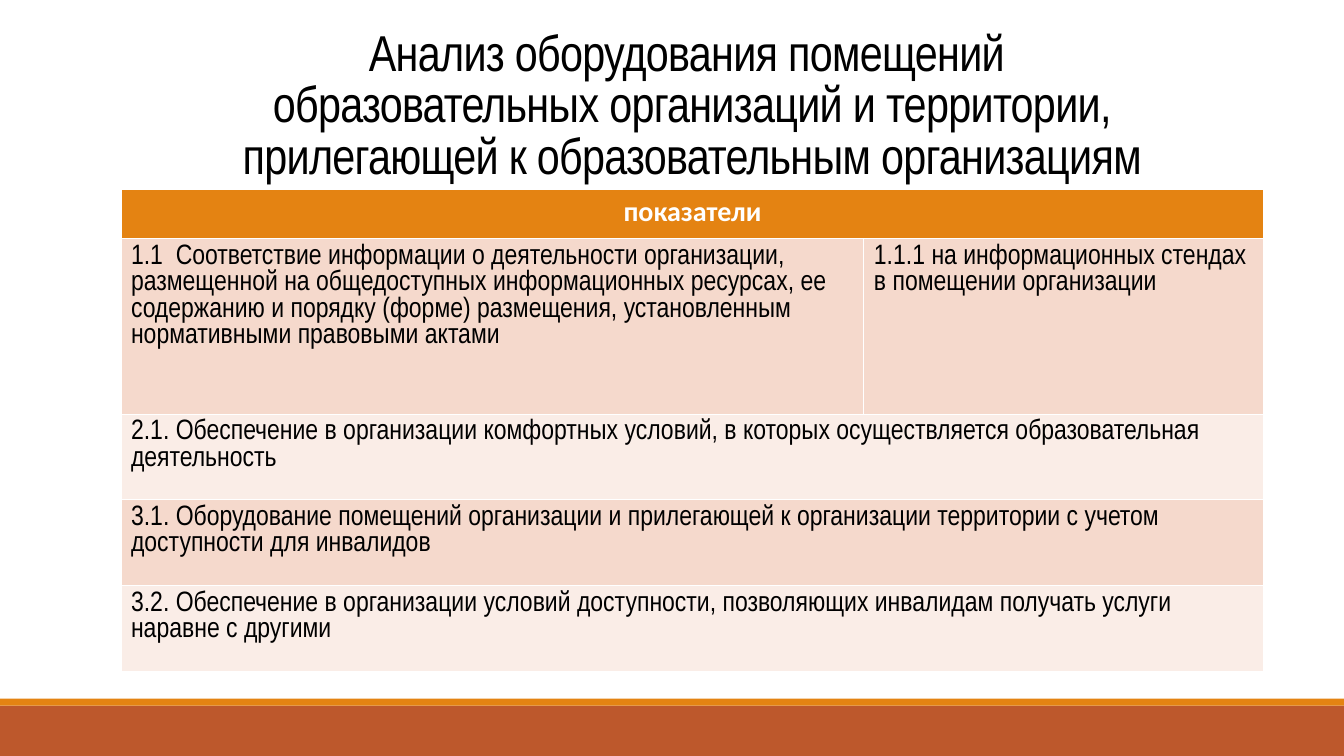
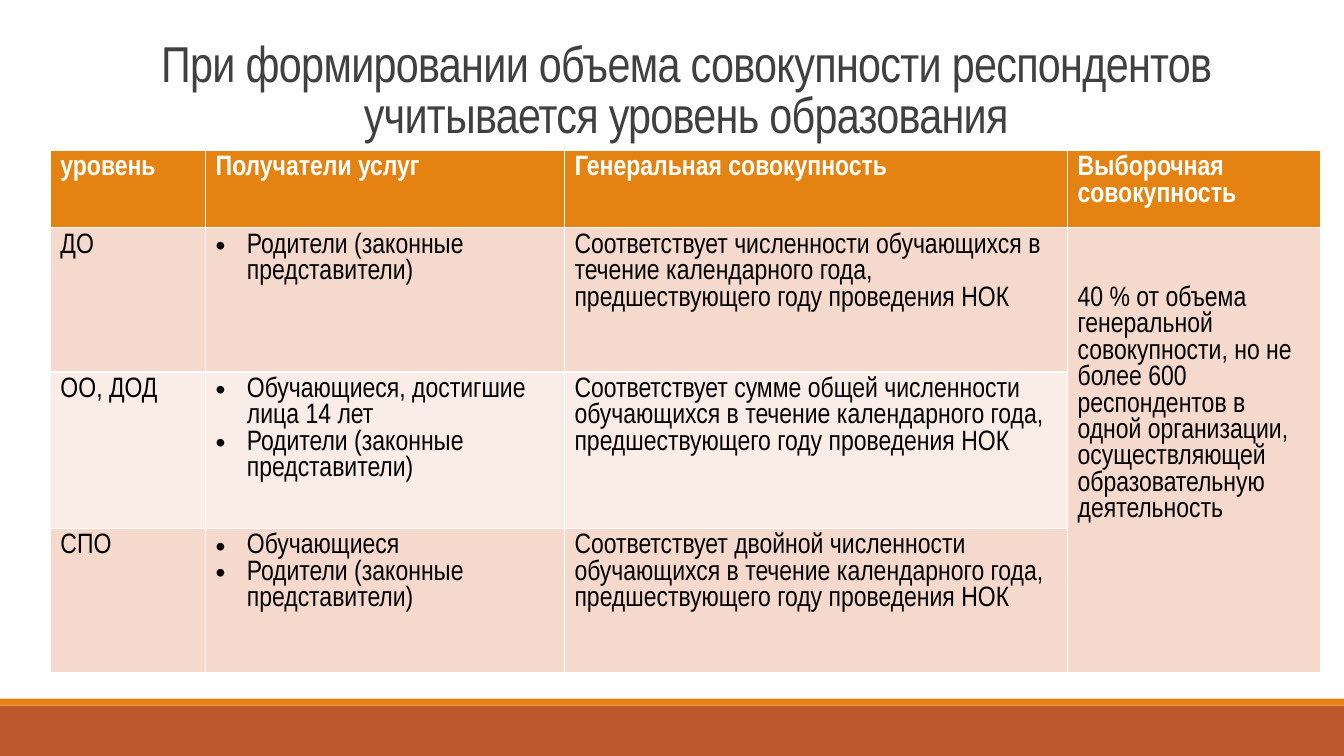
"""Build two slides with tables on the assessment of educational organisations."""
from dataclasses import dataclass

from lxml.etree import SubElement
from pptx import Presentation
from pptx.dml.color import RGBColor
from pptx.enum.shapes import MSO_SHAPE
from pptx.enum.text import MSO_ANCHOR, PP_ALIGN
from pptx.oxml.ns import qn
from pptx.util import Inches, Pt

SLIDE_WIDTH = Inches(13.33)
SLIDE_HEIGHT = Inches(7.5)


@dataclass(frozen=True)
class Theme:
    """Colours, fonts and type sizes shared by the slides."""
    footer: str = "BD582C"
    accent: str = "E48312"
    odd_row: str = "F5D9CC"
    even_row: str = "FAEDE7"
    ink: str = "000000"
    soft_ink: str = "404040"
    paper: str = "FFFFFF"
    narrow: str = "Arial Narrow"
    plain: str = "Calibri"
    title_size: int = 36
    body_size: int = 20


THEME = Theme()


def across(percent):
    """Return a share of the slide's width."""
    return round(SLIDE_WIDTH * percent / 100)


def down(percent):
    """Return a share of the slide's height."""
    return round(SLIDE_HEIGHT * percent / 100)


def set_font(paragraph, size, color, name=THEME.narrow, bold=False):
    """Set the font of a whole paragraph."""
    font = paragraph.font
    font.name, font.size, font.bold = name, Pt(size), bold
    font.color.rgb = RGBColor.from_string(color)


def add_band(slide, top, height, color):
    """Draw a band over the full width of the slide."""
    band = slide.shapes.add_shape(
        MSO_SHAPE.RECTANGLE, 0, down(top), SLIDE_WIDTH, down(height))
    band.shadow.inherit = False
    band.fill.solid()
    band.fill.fore_color.rgb = RGBColor.from_string(color)
    band.line.fill.background()


def add_title(slide, text, left, top, width, height, color):
    """Write a centred title that stands on the bottom of its box."""
    frame = slide.shapes.add_textbox(
        across(left), down(top), across(width), down(height)).text_frame
    frame.word_wrap = True
    frame.vertical_anchor = MSO_ANCHOR.BOTTOM
    title = frame.paragraphs[0]
    title.text = text
    title.alignment = PP_ALIGN.CENTER
    title.line_spacing = 0.85
    set_font(title, THEME.title_size, color)
    title._p.pPr.find(qn("a:defRPr")).set("spc", "-50")


def add_bullet(paragraph):
    """Give a paragraph a hanging round bullet."""
    properties = paragraph._p.get_or_add_pPr()
    indent = Inches(0.31)
    properties.set("marL", str(indent))
    properties.set("indent", str(-indent))
    typeface = SubElement(properties, qn("a:buFont"))
    typeface.set("typeface", "Arial")
    SubElement(properties, qn("a:buChar")).set("char", "•")


def fill_cell(cell, content, is_header, header_font):
    """Write a text, or a list of bulleted items, into a cell."""
    bulleted = isinstance(content, list)
    items = content if bulleted else [content]
    frame = cell.text_frame
    for index, item in enumerate(items):
        paragraph = frame.add_paragraph() if index else frame.paragraphs[0]
        paragraph.text = item
        if bulleted:
            add_bullet(paragraph)
        set_font(paragraph, THEME.body_size,
                 THEME.paper if is_header else THEME.ink,
                 header_font if is_header else THEME.narrow, is_header)


def add_grid(slide, left, top, columns, rows, contents, spans,
             header_font=THEME.narrow):
    """Add a banded table; None marks a cell covered by a span."""
    table = slide.shapes.add_table(
        len(rows), len(columns), across(left), down(top),
        across(sum(columns)), down(sum(rows))).table
    table.horz_banding = False
    for column, width in zip(table.columns, columns):
        column.width = across(width)
    for index, (row, height) in enumerate(zip(table.rows, rows)):
        row.height = down(height)
        band = THEME.odd_row if index % 2 else THEME.even_row
        for cell, content in zip(row.cells, contents[index]):
            cell.fill.solid()
            cell.fill.fore_color.rgb = RGBColor.from_string(
                band if index else THEME.accent)
            if content is not None:
                fill_cell(cell, content, index == 0, header_font)
    for first, last in spans:
        table.cell(*first).merge(table.cell(*last))
    return table


def start_slide(deck):
    """Add a blank slide with the two bands at its foot."""
    slide = deck.slides.add_slide(deck.slide_layouts[6])
    add_band(slide, 93.33, 6.67, THEME.footer)
    add_band(slide, 92.4, 0.93, THEME.accent)
    return slide


def build_equipment(deck):
    """Build the slide on the equipment of premises."""
    slide = start_slide(deck)
    add_title(slide, "Анализ оборудования помещений \n"
              "образовательных организаций и территории,\n"
              " прилегающей к образовательным организациям ",
              9, 1.87, 85, 23.2, THEME.ink)
    contents = [
        ["показатели", None],
        ["1.1  Соответствие информации о деятельности организации, "
         "размещенной на общедоступных информационных ресурсах, ее "
         "содержанию и порядку (форме) размещения, установленным "
         "нормативными правовыми актами",
         "1.1.1 на информационных стендах в помещении организации"],
        ["2.1. Обеспечение в организации комфортных условий, в которых "
         "осуществляется образовательная деятельность", None],
        ["3.1. Оборудование помещений организации и прилегающей к "
         "организации территории с учетом доступности для инвалидов", None],
        ["3.2. Обеспечение в организации условий доступности, позволяющих "
         "инвалидам получать услуги наравне с другими", None],
    ]
    spans = [((row, 0), (row, 1)) for row in (0, 2, 3, 4)]
    indicators = add_grid(slide, 9, 25.07, [55.28, 29.78],
                          [6.53, 23.2] + [11.33] * 3,
                          contents, spans, THEME.plain)
    indicators.cell(0, 0).text_frame.paragraphs[0].alignment = PP_ALIGN.CENTER


def build_respondents(deck):
    """Build the slide on the number of respondents by level."""
    slide = start_slide(deck)
    add_title(slide, "При формировании объема совокупности респондентов "
              "учитывается уровень образования",
              7.95, 1.47, 86.2, 18.27, THEME.soft_ink)
    parents = "Родители (законные представители)"
    population = ("Соответствует {} обучающихся в течение календарного года, "
                  "предшествующего году проведения НОК")
    contents = [
        ["уровень", "Получатели услуг", "Генеральная совокупность",
         "Выборочная совокупность"],
        ["ДО", [parents], population.format("численности"),
         "40 % от объема генеральной совокупности, но не более 600 "
         "респондентов в одной организации, осуществляющей "
         "образовательную деятельность"],
        ["ОО, ДОД", ["Обучающиеся, достигшие лица 14 лет", parents],
         population.format("сумме общей численности"), None],
        ["СПО", ["Обучающиеся", parents],
         population.format("двойной численности"), None],
    ]
    levels = add_grid(slide, 3.75, 19.87, [11.55, 26.7, 37.43, 18.83],
                      [10.27, 19.07, 20.67, 19.07],
                      contents, [((1, 3), (3, 3))])
    levels.cell(1, 3).margin_top = down(7.7)


def main():
    """Build and save the presentation."""
    deck = Presentation()
    deck.slide_width, deck.slide_height = SLIDE_WIDTH, SLIDE_HEIGHT
    build_equipment(deck)
    build_respondents(deck)
    deck.save("out.pptx")


if __name__ == "__main__":
    main()
